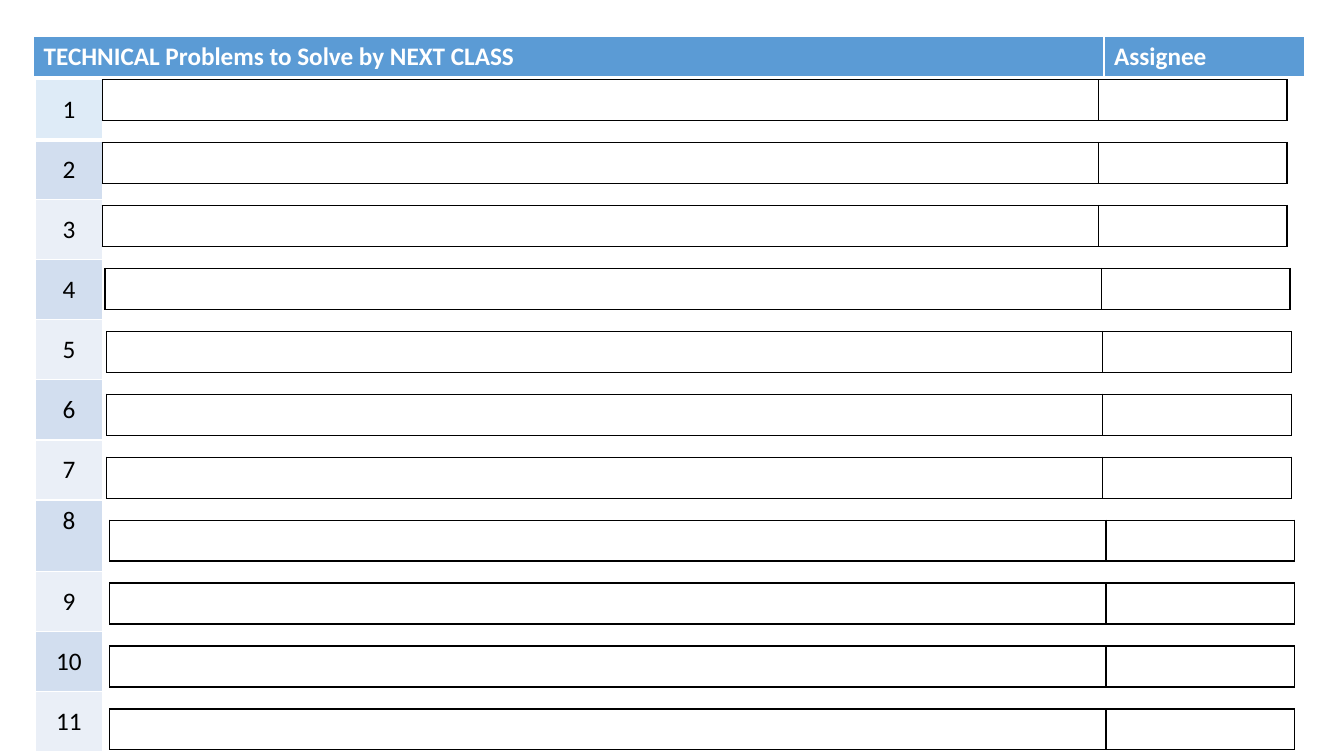
import pptx
import pptx.dml.color
import pptx.enum.text
import pptx.oxml
import pptx.oxml.ns
import pptx.util
from pptx.util import Pt

COLORS = {
    "white": "FFFFFF",
    "black": "000000",
    "header": "5B9BD5",
    "first": "DEEBF7",
    "dark_band": "D2DEEF",
    "light_band": "EAEFF7",
}
FONT = "Calibri"
PROBLEM_COUNT = 11
TALL_NUMBER = 8
# Left edge of each answer row, which drifts right down the slide
ANSWER_LEFTS = [73] * 3 + [75] + [76.2] * 3 + [78.5] * 4
ANSWER_TOP, ANSWER_PITCH = 56.9, 44.95
MIDDLE = pptx.enum.text.MSO_ANCHOR.MIDDLE
CENTER = pptx.enum.text.PP_ALIGN.CENTER


def rgb(name):
    return pptx.dml.color.RGBColor.from_string(COLORS[name])


def write_text(cell, text, *, size=18, color="black", bold=False, align=None):
    paragraph = cell.text_frame.paragraphs[0]
    paragraph.alignment = align
    run = paragraph.add_run()
    run.text = text
    run.font.name = FONT
    run.font.size = Pt(size)
    run.font.bold = bold
    run.font.color.rgb = rgb(color)


def set_borders(cell, color, bottom_width=1):
    properties = cell._tc.get_or_add_tcPr()
    for index, side in enumerate("LRTB"):
        width = Pt(bottom_width if side == "B" else 1)
        border = pptx.oxml.parse_xml(
            f'<a:ln{side} {pptx.oxml.ns.nsdecls("a")} w="{width}"><a:solidFill>'
            f'<a:srgbClr val="{COLORS[color]}"/></a:solidFill></a:ln{side}>'
        )
        properties.insert(index, border)


def fill_cell(cell, fill, border, bottom_width=1):
    cell.fill.solid()
    cell.fill.fore_color.rgb = rgb(fill)
    set_borders(cell, border, bottom_width)


def add_plain_table(slide, left, top, widths, heights):
    frame = slide.shapes.add_table(
        len(heights), len(widths), Pt(left), Pt(top), Pt(sum(widths)), Pt(sum(heights))
    )
    table = frame.table
    table.first_row = table.horz_banding = False
    for column, width in zip(table.columns, widths):
        column.width = Pt(width)
    for row, height in zip(table.rows, heights):
        row.height = Pt(height)
    return table


def add_header(slide):
    table = add_plain_table(slide, 24, 26.2, [764.6, 143.3], [29.2])
    titles = ["TECHNICAL Problems to Solve by NEXT CLASS", "Assignee"]
    for cell, title in zip(table.iter_cells(), titles):
        fill_cell(cell, "header", "white", bottom_width=3)
        write_text(cell, title, color="white", bold=True)


def add_numbers(slide):
    numbers = range(1, PROBLEM_COUNT + 1)
    heights = [49.7 if number == TALL_NUMBER else 42.9 for number in numbers]
    table = add_plain_table(slide, 25.2, 56.9, [48], heights)
    for number, cell in zip(numbers, table.iter_cells()):
        if number == 1:
            fill_cell(cell, "first", "white", bottom_width=3)
        else:
            fill_cell(cell, "light_band" if number % 2 else "dark_band", "white")
        cell.vertical_anchor = MIDDLE
        if number == TALL_NUMBER:
            cell.margin_bottom = Pt(25.6)
        write_text(cell, str(number), align=CENTER)


def add_answer_row(slide, left, top):
    table = add_plain_table(slide, left, top, [711.6, 134.8], [29.2])
    for cell in table.iter_cells():
        fill_cell(cell, "white", "black")


def main():
    presentation = pptx.Presentation()
    presentation.slide_width, presentation.slide_height = Pt(960), Pt(540)
    slide = presentation.slides.add_slide(presentation.slide_layouts[6])

    # Heading bar and numbered column
    add_header(slide)
    add_numbers(slide)

    # One blank problem and assignee row per number
    for index, left in enumerate(ANSWER_LEFTS):
        add_answer_row(slide, left, ANSWER_TOP + index * ANSWER_PITCH)

    presentation.save("out.pptx")


if __name__ == "__main__":
    main()
